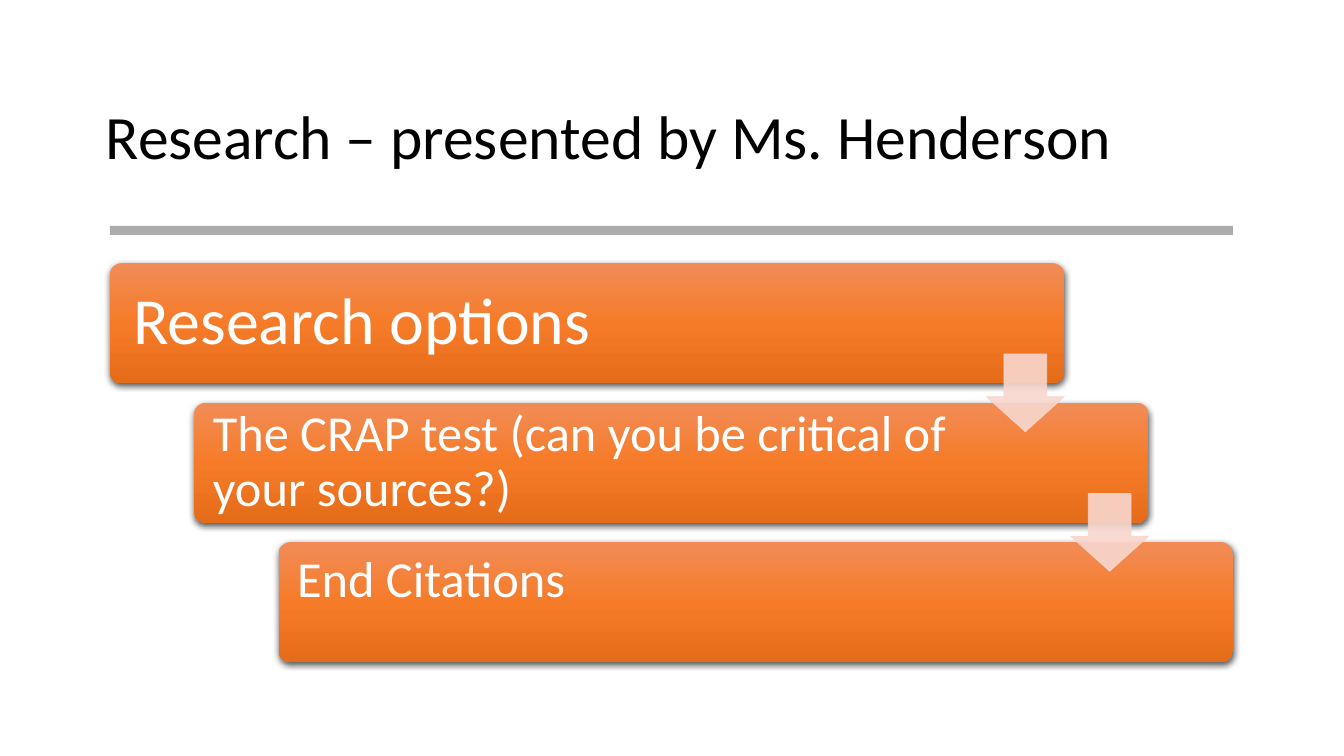
from copy import deepcopy
from dataclasses import dataclass

from lxml import etree
from pptx import Presentation
from pptx.dml.color import RGBColor
from pptx.enum.shapes import MSO_SHAPE
from pptx.enum.text import MSO_ANCHOR, MSO_AUTO_SIZE, PP_ALIGN
from pptx.oxml.ns import qn
from pptx.util import Cm, Pt

RECT = MSO_SHAPE.RECTANGLE
ROUND = MSO_SHAPE.ROUNDED_RECTANGLE
ARROW = MSO_SHAPE.DOWN_ARROW
MIDDLE, TOP = MSO_ANCHOR.MIDDLE, MSO_ANCHOR.TOP
LEFT = PP_ALIGN.LEFT
FIXED = MSO_AUTO_SIZE.NONE


@dataclass(frozen=True)
class Theme:
    font: str = "Calibri"
    ink: str = "000000"
    light: str = "FFFFFF"
    rule: str = "808080"
    arrow: str = "F8D7CE"
    blend: tuple = ((0, "F18C57"), (0.5, "F67B28"), (1, "E56C19"))
    title: int = 44
    lead: int = 47
    step: int = 36


THEME = Theme()

# Text, size, side inset, right inset, top inset, anchor
STEPS = (
    ("Research options", THEME.lead, 0.5, 3.56, 0, MIDDLE),
    ("The CRAP test (can you be critical of your sources?)",
     THEME.step, 0.38, 4.43, 0, MIDDLE),
    ("End Citations", THEME.step, 0.38, 4.43, 0.04, TOP),
)


def rgb(code):
    return RGBColor.from_string(code)


def write(shape, text, *, size, color, anchor=MIDDLE, pad=None, space=0.9):
    """Fill a shape with one paragraph; pad is left, top, right, bottom in cm."""
    frame = shape.text_frame
    frame.word_wrap = True
    frame.auto_size = FIXED
    frame.vertical_anchor = anchor
    if pad:
        (frame.margin_left, frame.margin_top,
         frame.margin_right, frame.margin_bottom) = map(Cm, pad)
    para = frame.paragraphs[0]
    para.alignment = LEFT
    para.line_spacing = space
    run = para.add_run()
    run.text = text
    run.font.name = THEME.font
    run.font.size = Pt(size)
    run.font.color.rgb = rgb(color)


def place(slide, kind, x, y, w, h):
    shape = slide.shapes.add_shape(kind, Cm(x), Cm(y), Cm(w), Cm(h))
    shape.shadow.inherit = False
    shape.line.fill.background()
    return shape


def tint(shape, color, alpha, line=None):
    """Give a see-through fill and, if a width is set, a matching line."""
    shape.fill.solid()
    shape.fill.fore_color.rgb = rgb(color)
    if line:
        shape.line.color.rgb = rgb(color)
        shape.line.width = Pt(line)
    for node in shape._element.spPr.iter(qn("a:srgbClr")):
        etree.SubElement(node, qn("a:alpha"), val=str(alpha * 1000))


def blend(shape):
    """Shade a shape from top to bottom."""
    fill = shape.fill
    fill.gradient()
    fill.gradient_angle = 270
    first = shape._element.spPr.find(".//" + qn("a:gs"))
    first.addnext(deepcopy(first))
    for stop, (pos, color) in zip(fill.gradient_stops, THEME.blend):
        stop.position = pos
        stop.color.rgb = rgb(color)


def shade(shape):
    """Cast a soft shadow below a shape."""
    effects = shape._element.spPr.find(qn("a:effectLst"))
    cast = etree.SubElement(
        effects, qn("a:outerShdw"), blurRad=str(Pt(4.5)), dist=str(Pt(1.5)),
        dir="5400000", algn="ctr", rotWithShape="0")
    color = etree.SubElement(cast, qn("a:srgbClr"), val=THEME.ink)
    etree.SubElement(color, qn("a:alpha"), val="63000")


def head(slide, x, y, w, h):
    title = slide.shapes.title
    title.left, title.top, title.width, title.height = map(Cm, (x, y, w, h))
    write(title, "Research – presented by Ms. Henderson",
          size=THEME.title, color=THEME.ink)


def rule(slide, x, y, w, h):
    tint(place(slide, RECT, x, y, w, h), THEME.rule, 65)


def stairs(slide, x, y, w, h):
    """Draw bars stepping down to the right, with an arrow between each two."""
    wide, high, side, drop = 24.05, 3.03, 1.96, 2.29
    gaps = len(STEPS) - 1
    dx, dy = (w - wide) / gaps, (h - high) / gaps
    for i, (text, size, left, right, top, anchor) in enumerate(STEPS):
        bar = place(slide, ROUND, x + i * dx, y + i * dy, wide, high)
        bar.adjustments[0] = 0.1
        blend(bar)
        shade(bar)
        write(bar, text, size=size, color=THEME.light, anchor=anchor,
              pad=(left, top, right, 0), space=1 if anchor == TOP else 0.9)
    for i in range(gaps):
        arrow = place(slide, ARROW, x + i * dx + wide - side,
                      y + i * dy + drop, side, side)
        arrow.adjustments[0] = 0.55
        arrow.adjustments[1] = 0.45
        tint(arrow, THEME.arrow, 90, line=0.5)


def main():
    deck = Presentation()
    deck.slide_width, deck.slide_height = Cm(33.87), Cm(19.05)
    slide = deck.slides.add_slide(deck.slide_layouts[5])
    head(slide, 2.41, 1.68, 29.03, 3.68)
    rule(slide, 2.77, 5.69, 28.3, 0.23)
    stairs(slide, 2.77, 6.63, 28.3, 10.06)
    deck.save("out.pptx")


if __name__ == "__main__":
    main()
